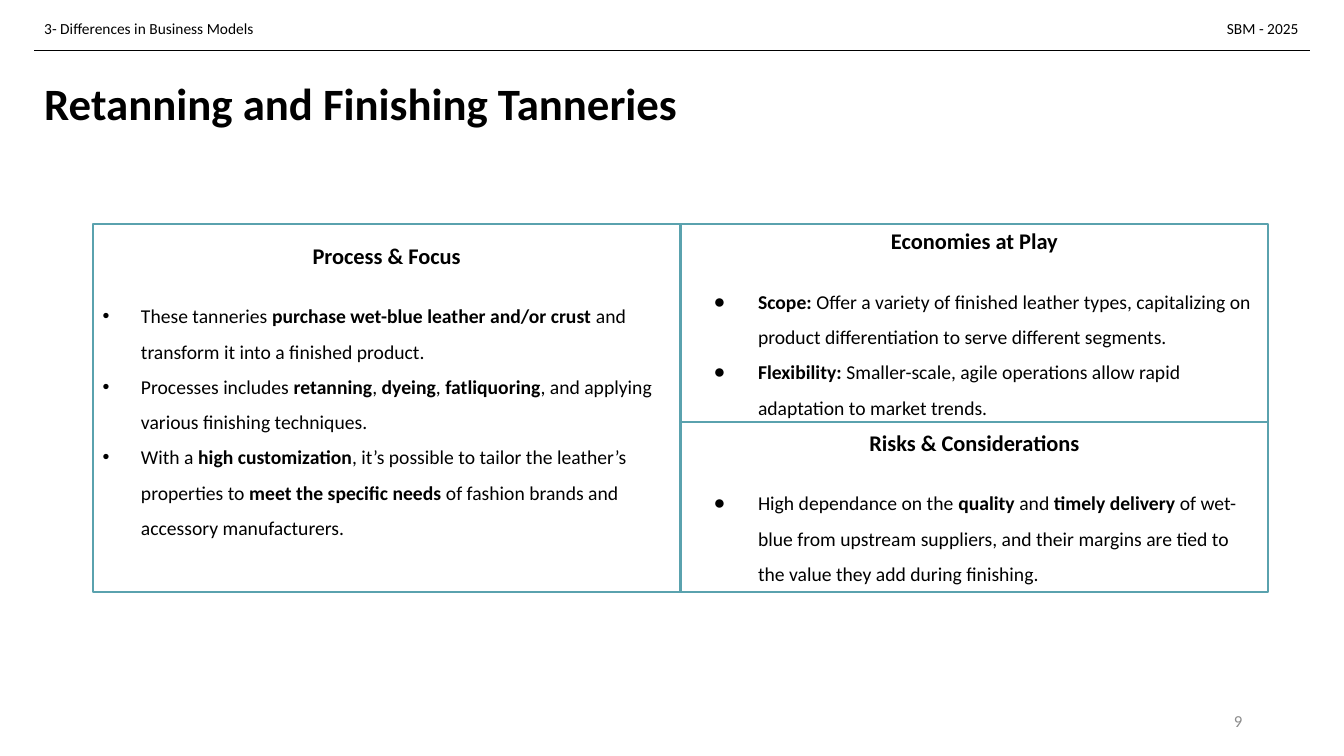
from lxml.etree import SubElement
from pptx import Presentation
from pptx.dml.color import RGBColor
from pptx.enum.shapes import MSO_CONNECTOR as Connector, MSO_SHAPE as Shape
from pptx.enum.text import MSO_ANCHOR as Anchor, PP_ALIGN as Align
from pptx.oxml.ns import qn
from pptx.util import Inches, Pt

WIDTH, HEIGHT = 13.33, 7.5
MARGIN = 0.34
RULE_TOP, RULE_END = 0.5, 12.99
HEADER_TOP, HEADER_HEIGHT = 0.14, 0.29
GRID_LEFT, GRID_TOP = 0.92, 2.22
COLUMN_WIDTH = 5.83
ROW_HEIGHTS = (1.97, 1.68)
FONT = "Calibri"
BLACK, WHITE, GREY, TEAL = "000000", "FFFFFF", "8C8C8C", "5AA2AE"

# Bullet character, text indent and hanging distance in inches
DOT = ("•", 0.38, 0.38)
DISC = ("●", 0.67, 0.44)

# Column, first row, rows spanned, space kept below the text, bullet, heading, points
PANELS = [
    (0, 0, 2, 0.34, DOT, "Process & Focus", [
        "These tanneries **purchase wet-blue leather and/or crust **and transform it "
        "into a finished product.",
        "Processes includes **retanning**, **dyeing**, **fatliquoring**, and applying "
        "various finishing techniques.",
        "With a** high customization**, it’s possible to tailor the leather’s properties "
        "to **meet the specific needs** of fashion brands and accessory manufacturers.",
    ]),
    (1, 0, 1, 0, DISC, "Economies at Play", [
        "**Scope:** Offer a variety of finished leather types, capitalizing on product "
        "differentiation to serve different segments.",
        "**Flexibility:** Smaller-scale, agile operations allow rapid adaptation to "
        "market trends.",
    ]),
    (1, 1, 1, 0, DISC, "Risks & Considerations", [
        "High dependance on the **quality** and **timely delivery** of wet-blue from "
        "upstream suppliers, and their margins are tied to the value they add during "
        "finishing.",
    ]),
]


def rgb(color):
    return RGBColor.from_string(color)


def add_runs(paragraph, text, size, color=BLACK, bold=False):
    """Write text, switching bold at each pair of asterisks."""
    for index, part in enumerate(text.split("**")):
        if not part:
            continue
        run = paragraph.add_run()
        run.text = part
        run.font.color.rgb = rgb(color)
        font_format = {"name": FONT, "size": Pt(size), "bold": bold or index % 2 == 1}
        for name, value in font_format.items():
            setattr(run.font, name, value)


def add_label(slide, box, text, size, color=BLACK, bold=False,
              align=Align.LEFT, anchor=Anchor.TOP):
    frame = slide.shapes.add_textbox(*map(Inches, box)).text_frame
    frame.word_wrap = True
    frame.vertical_anchor = anchor
    paragraph = frame.paragraphs[0]
    paragraph.alignment = align
    add_runs(paragraph, text, size, color, bold)
    return paragraph


def add_rule(slide):
    ends = map(Inches, (MARGIN, RULE_TOP, RULE_END, RULE_TOP))
    rule = slide.shapes.add_connector(Connector.STRAIGHT, *ends)
    rule.line.color.rgb = rgb(BLACK)
    rule.line.width = Pt(0.25)
    SubElement(rule._element.spPr, qn("a:effectLst"))


def add_point(frame, text, bullet):
    character, indent, hanging = bullet
    paragraph = frame.add_paragraph()
    properties = paragraph._p.get_or_add_pPr()
    properties.set("marL", str(Inches(indent)))
    properties.set("indent", str(-Inches(hanging)))
    SubElement(properties, qn("a:buFont"), typeface="Arial")
    SubElement(properties, qn("a:buChar"), char=character)
    paragraph.alignment = Align.LEFT
    paragraph.line_spacing = 1.5
    add_runs(paragraph, text, 14)


def add_panel(slide, column, row, span, space_below, bullet, heading, points):
    left = GRID_LEFT + column * COLUMN_WIDTH
    top = GRID_TOP + sum(ROW_HEIGHTS[:row])
    height = sum(ROW_HEIGHTS[row:row + span])
    box = map(Inches, (left, top, COLUMN_WIDTH, height))
    panel = slide.shapes.add_shape(Shape.RECTANGLE, *box)
    panel.shadow.inherit = False
    panel.fill.solid()
    panel.fill.fore_color.rgb = rgb(WHITE)
    panel.line.color.rgb = rgb(TEAL)
    panel.line.width = Pt(1.5)

    frame = panel.text_frame
    frame.word_wrap = True
    frame.vertical_anchor = Anchor.MIDDLE
    frame.margin_bottom = Inches(0.05 + space_below)
    title = frame.paragraphs[0]
    title.alignment = Align.CENTER
    title.space_after = Pt(17)
    add_runs(title, heading, 16, bold=True)
    for point in points:
        add_point(frame, point, bullet)


def main():
    presentation = Presentation()
    presentation.slide_width = Inches(WIDTH)
    presentation.slide_height = Inches(HEIGHT)
    slide = presentation.slides.add_slide(presentation.slide_layouts[6])

    title = add_label(slide, (MARGIN, RULE_TOP, 11.5, 1.11),
                      "Retanning and Finishing Tanneries", 32, bold=True,
                      anchor=Anchor.MIDDLE)
    title.line_spacing = 0.9
    add_label(slide, (9.42, 6.95, 3, 0.4), "9", 12, GREY,
              align=Align.RIGHT, anchor=Anchor.MIDDLE)
    add_rule(slide)
    add_label(slide, (12.07, HEADER_TOP, 0.93, HEADER_HEIGHT), "SBM - 2025", 11)
    add_label(slide, (MARGIN, HEADER_TOP, 3.22, HEADER_HEIGHT),
              "3- Differences in Business Models", 11)
    for panel in PANELS:
        add_panel(slide, *panel)

    presentation.save("out.pptx")


if __name__ == "__main__":
    main()
